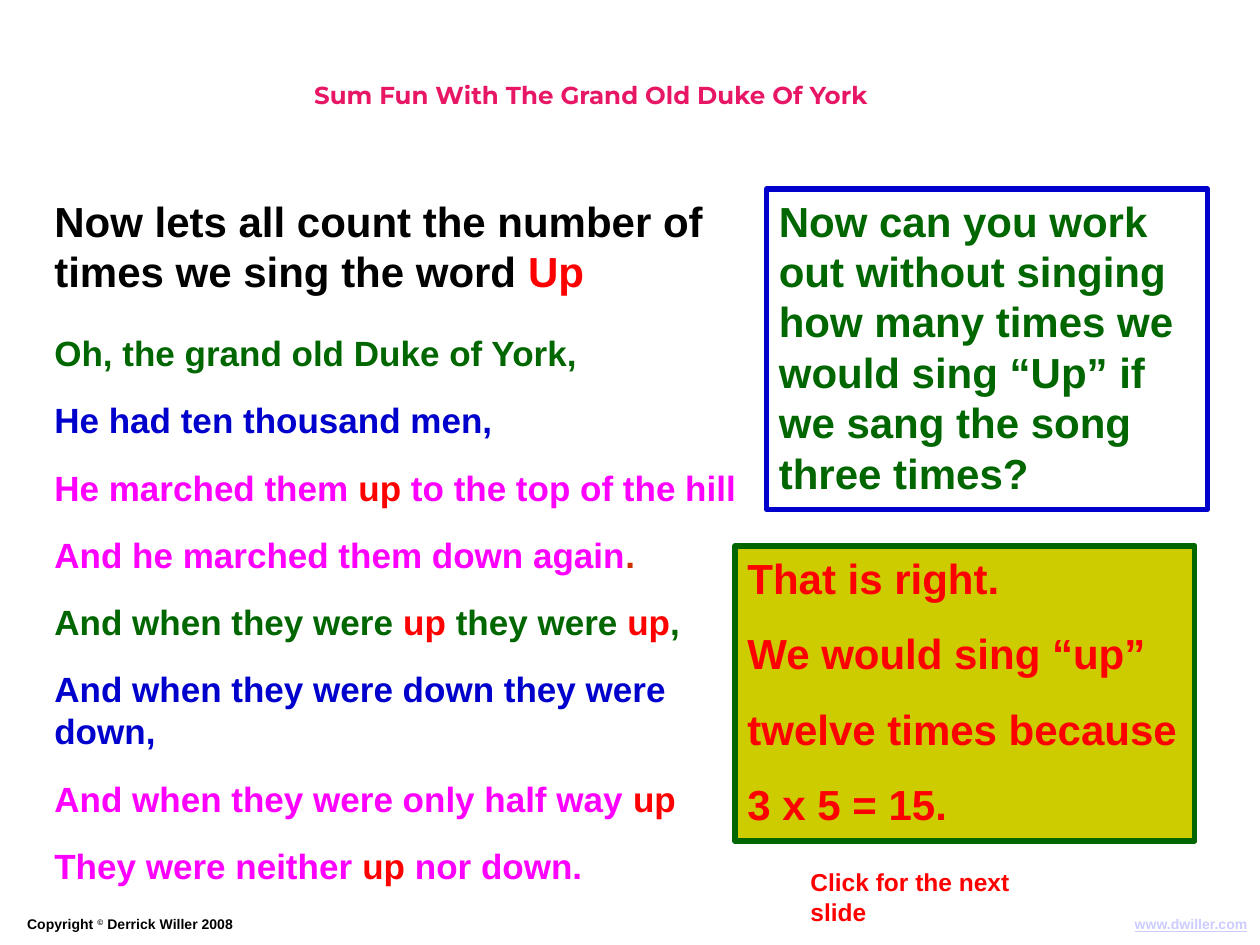
from dataclasses import dataclass
from typing import Optional

from pptx import Presentation
from pptx import util as u
from pptx.dml.color import RGBColor
from pptx.enum import shapes, text

COLOURS = {
    "black": "000000", "white": "FFFFFF", "red": "FF0000", "green": "006600",
    "blue": "0000CC", "magenta": "FF00FF", "rust": "CC3300", "olive": "CCCC00",
    "lilac": "CCCCFF", "pink": "E81766",
}
CELL = u.Inches(1) / 12  # the page is a grid of 120 columns by 90 rows
LINE_PITCH = 1.2
VERSE_GAP = u.Pt(14.4)


@dataclass
class Span:
    words: str
    colour: str
    underline: bool = False
    raised: bool = False


@dataclass
class Panel:
    col: float
    row: float
    cols: float
    rows: float
    size: int
    paras: list[list[Span]]
    fill: Optional[str] = None
    outline: Optional[str] = None
    align: text.PP_ALIGN = text.PP_ALIGN.LEFT


def rgb(name: str) -> RGBColor:
    return RGBColor.from_string(COLOURS[name])


def place(box, col: float, row: float, cols: float, rows: float) -> None:
    box.left, box.top = u.Emu(round(col * CELL)), u.Emu(round(row * CELL))
    box.width, box.height = u.Emu(round(cols * CELL)), u.Emu(round(rows * CELL))


def add_span(para, span: Span, size: int, font: str = "Arial") -> None:
    run = para.add_run()
    run.text = span.words
    run.font.name, run.font.size, run.font.bold = font, u.Pt(size), True
    run.font.color.rgb = rgb(span.colour)
    if span.underline:
        run.font.underline = True
    if span.raised:
        run._r.get_or_add_rPr().set("baseline", "30000")


def add_panel(page, panel: Panel) -> None:
    if panel.fill:
        box = page.shapes.add_shape(shapes.MSO_SHAPE.RECTANGLE, 0, 0, 0, 0)
        box.shadow.inherit = False
        box.fill.solid()
        box.fill.fore_color.rgb = rgb(panel.fill)
        if panel.outline:
            box.line.color.rgb = rgb(panel.outline)
            box.line.width = u.Pt(3)
        else:
            box.line.fill.background()
    else:
        box = page.shapes.add_textbox(0, 0, 0, 0)
    place(box, panel.col, panel.row, panel.cols, panel.rows)
    frame = box.text_frame
    frame.word_wrap = True
    frame.auto_size = text.MSO_AUTO_SIZE.SHAPE_TO_FIT_TEXT
    frame.vertical_anchor = text.MSO_ANCHOR.TOP
    for index, spans in enumerate(panel.paras):
        para = frame.add_paragraph() if index else frame.paragraphs[0]
        para.alignment = panel.align
        para.line_spacing = u.Pt(panel.size * LINE_PITCH)
        para.space_before = VERSE_GAP if index else u.Pt(0)
        for span in spans:
            add_span(para, span, panel.size)


def add_title(page, words: str) -> None:
    title = page.shapes.title
    place(title, 25.1, 7, 62.4, 6)
    frame = title.text_frame
    frame.word_wrap = False
    frame.auto_size = text.MSO_AUTO_SIZE.NONE
    frame.vertical_anchor = text.MSO_ANCHOR.TOP
    para = frame.paragraphs[0]
    para.alignment = text.PP_ALIGN.CENTER
    add_span(para, Span(words, "pink"), 14, "Montserrat")


def verse(colour: str, *parts: str) -> list[Span]:
    """One line of the song, with every "up" in red."""
    return [Span(part, "red" if part == "up" else colour) for part in parts]


SONG = [
    verse("green", "Oh, the grand old Duke of York,"),
    verse("blue", "He had ten thousand men,"),
    verse("magenta", "He marched them ", "up", " to the top of the hill"),
    verse("magenta", "And he marched them down again") + [Span(".", "rust")],
    verse("green", "And when they were ", "up", " they were ", "up", ","),
    verse("blue", "And when they were down they were down,"),
    verse("magenta", "And when they were only half way ", "up"),
    verse("magenta", "They were neither ", "up", " nor down."),
]
COUNT_TASK = [[
    Span("Now lets all count the number of times we sing the word ", "black"),
    Span("Up", "red"),
]]
QUESTION = [[Span(
    "Now can you work out without singing how many times we would sing “Up” "
    "if we sang the song three times?", "green")]]
ANSWER = [[Span(line, "red")] for line in (
    "That is right.", "We would sing “up”", "twelve times because", "3 x 5 = 15.")]
COPYRIGHT = [[
    Span("Copyright ", "black"),
    Span("©", "black", raised=True),
    Span(" Derrick Willer 2008", "black"),
]]
WEBSITE = [[Span("www.dwiller.com", "lilac", underline=True)]]
PROMPT = [[Span("Click for the next slide", "red")]]

PANELS = [
    Panel(1.4, 86.6, 67.8, 2.9, 8, COPYRIGHT),
    Panel(103.9, 86.6, 16.1, 2.9, 8, WEBSITE, align=text.PP_ALIGN.RIGHT),
    Panel(4, 31, 71, 54, 20, SONG),
    Panel(4, 18, 72, 10.8, 24, COUNT_TASK),
    Panel(73, 18, 42, 30.5, 24, QUESTION, "white", "blue"),
    Panel(70, 52, 43.8, 28.1, 24, ANSWER, "olive", "green"),
    Panel(76, 82, 27.2, 4, 14, PROMPT, "white"),
]


def main() -> None:
    deck = Presentation()
    deck.slide_width, deck.slide_height = u.Inches(10), u.Inches(7.5)
    page = deck.slides.add_slide(deck.slide_layouts.get_by_name("Title Only"))
    add_title(page, "Sum Fun With The Grand Old Duke Of York")
    for panel in PANELS:
        add_panel(page, panel)
    deck.save("out.pptx")


if __name__ == "__main__":
    main()
